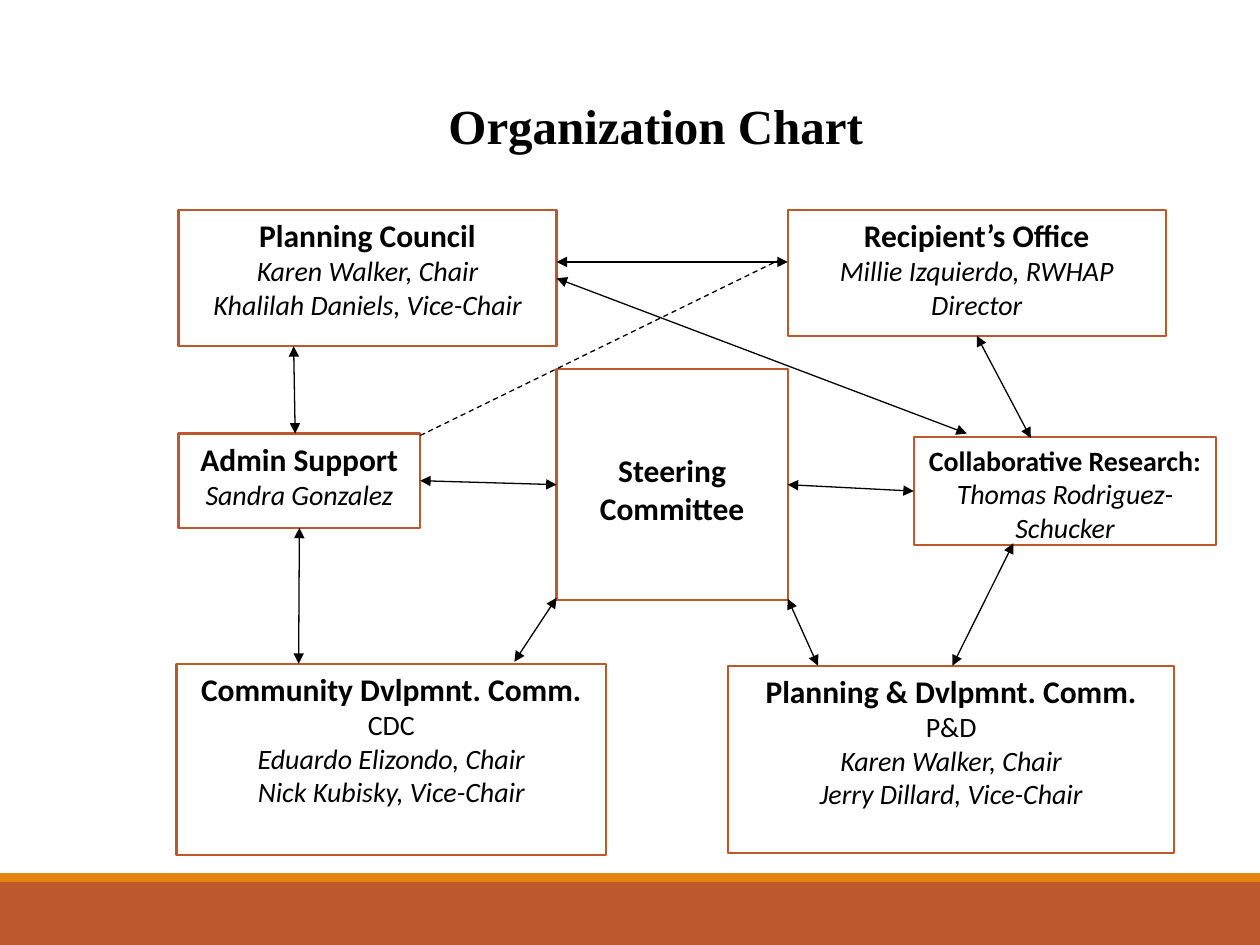
from dataclasses import dataclass
from lxml.etree import SubElement
from pptx import Presentation
from pptx.dml.color import RGBColor
from pptx.enum.dml import MSO_LINE
from pptx.enum.shapes import MSO_CONNECTOR, MSO_SHAPE
from pptx.enum.text import MSO_ANCHOR, PP_ALIGN
from pptx.oxml.ns import qn
from pptx.util import Cm, Pt


@dataclass(frozen=True)
class Theme:
    ink: str = "000000"
    paper: str = "FFFFFF"
    rust: str = "BD582C"
    amber: str = "E48312"
    body: str = "Calibri"
    serif: str = "Times New Roman"
    title: int = 28
    head: int = 18
    text: int = 16
    edge: float = 1.25
    wire: float = 0.75


THEME = Theme()
STYLES = {
    "title": (THEME.serif, THEME.title, True, False),
    "head": (THEME.body, THEME.head, True, False),
    "label": (THEME.body, THEME.text, True, False),
    "plain": (THEME.body, THEME.text, False, False),
    "name": (THEME.body, THEME.text, False, True),
}

TITLE = ("Organization Chart", (2.74, 1.8, 20.96, 1.45))
BANDS = [
    ((0, 17.78, 25.4, 1.27), THEME.rust),
    ((0, 17.6, 25.4, 0.18), THEME.amber),
]
BOXES = {
    "council": ((3.6, 4.23, 7.62, 2.75), [
        [("Planning Council", "head")],
        [("Karen Walker, Chair", "name")],
        [("Khalilah Daniels, Vice-Chair", "name")],
    ]),
    "office": ((15.88, 4.23, 7.62, 2.54), [
        [("Recipient’s Office", "head")],
        [("Millie Izquierdo, RWHAP Director", "name")],
    ]),
    "steering": ((11.22, 7.44, 4.66, 4.66), [
        [("Steering Committee", "head")],
    ]),
    "admin": ((3.6, 8.74, 4.87, 1.9), [
        [("Admin Support", "head")],
        [("Sandra Gonzalez", "name")],
    ]),
    "community": ((3.56, 13.38, 8.66, 3.86), [
        [("Community Dvlpmnt. Comm.", "head")],
        [("CDC", "plain")],
        [("Eduardo Elizondo, Chair", "name")],
        [("Nick Kubisky, Vice-Chair", "name")],
    ]),
    "planning": ((14.68, 13.42, 8.99, 3.78), [
        [("Planning & Dvlpmnt. Comm.", "head")],
        [("P&D", "plain")],
        [("Karen Walker, Chair", "name")],
        [("Jerry Dillard, Vice-Chair", "name")],
    ]),
    "research": ((18.42, 8.81, 6.1, 2.18), [
        [("Collaborative Research: ", "label"),
         ("Thomas Rodriguez-Schucker", "name")],
    ]),
}
TOP, LEFT, BOTTOM, RIGHT = range(4)
LINKS = [
    ((11.22, 5.28), (15.88, 5.28)),
    ((5.92, 6.98), (5.95, 8.74)),
    (("admin", RIGHT), ("steering", LEFT)),
    (("admin", BOTTOM), (6.02, 13.38)),
    ((10.37, 13.34), (11.22, 12.05)),
    ((15.88, 12.07), (16.49, 13.42)),
    (("office", BOTTOM), (20.78, 8.83)),
    ((20.43, 10.95), (19.2, 13.42)),
    (("steering", RIGHT), ("research", LEFT)),
    ((11.22, 5.61), (19.49, 8.74)),
]
DASHED = ((8.47, 8.78), (15.71, 5.24))


def style(font, kind):
    """Apply a named text style to a font."""
    font.name, size, font.bold, font.italic = STYLES[kind]
    font.size = Pt(size)
    font.color.rgb = RGBColor.from_string(THEME.ink)


def write(frame, paras):
    """Fill a text frame with centred paragraphs of styled runs."""
    frame.word_wrap = True
    frame.vertical_anchor = MSO_ANCHOR.TOP
    for num, runs in enumerate(paras):
        para = frame.add_paragraph() if num else frame.paragraphs[0]
        para.alignment = PP_ALIGN.CENTER
        for text, kind in runs:
            run = para.add_run()
            run.text = text
            style(para.font if len(runs) == 1 else run.font, kind)


def block(slide, place, fill, edge=None):
    """Add a flat rectangle, outlined when an edge colour is given."""
    shape = slide.shapes.add_shape(MSO_SHAPE.RECTANGLE, *map(Cm, place))
    shape.shadow.inherit = False
    shape.fill.solid()
    shape.fill.fore_color.rgb = RGBColor.from_string(fill)
    if edge:
        shape.line.color.rgb = RGBColor.from_string(edge)
        shape.line.width = Pt(THEME.edge)
    else:
        shape.line.fill.background()
    return shape


def link(slide, boxes, ends, dash=False):
    """Draw a dashed line or a double arrow between points or box sides."""
    spots = [(0, 0) if end[0] in boxes else end for end in ends]
    wire = slide.shapes.add_connector(
        MSO_CONNECTOR.STRAIGHT, *(Cm(v) for spot in spots for v in spot))
    for end, join in zip(ends, (wire.begin_connect, wire.end_connect)):
        if end[0] in boxes:
            join(boxes[end[0]], end[1])
    wire.line.color.rgb = RGBColor.from_string(THEME.ink)
    wire.line.width = Pt(THEME.wire)
    props = wire.element.spPr
    if dash:
        wire.line.dash_style = MSO_LINE.DASH
    else:
        for tag in ("a:headEnd", "a:tailEnd"):
            SubElement(props.find(qn("a:ln")), qn(tag), type="triangle")
    SubElement(props, qn("a:effectLst"))


def main():
    """Build the organization chart slide."""
    deck = Presentation()
    deck.slide_width, deck.slide_height = Cm(25.4), Cm(19.05)
    slide = deck.slides.add_slide(deck.slide_layouts[6])
    for place, fill in BANDS:
        block(slide, place, fill)
    text, place = TITLE
    title = slide.shapes.add_textbox(*map(Cm, place))
    write(title.text_frame, [[(text, "title")]])
    boxes = {}
    for key, (place, paras) in BOXES.items():
        boxes[key] = block(slide, place, THEME.paper, THEME.rust)
        write(boxes[key].text_frame, paras)
    center = boxes["steering"].text_frame
    center.vertical_anchor = MSO_ANCHOR.MIDDLE
    center.margin_top = Cm(0.3)
    for ends in LINKS:
        link(slide, boxes, ends)
    link(slide, boxes, DASHED, dash=True)
    deck.save("out.pptx")


if __name__ == "__main__":
    main()
